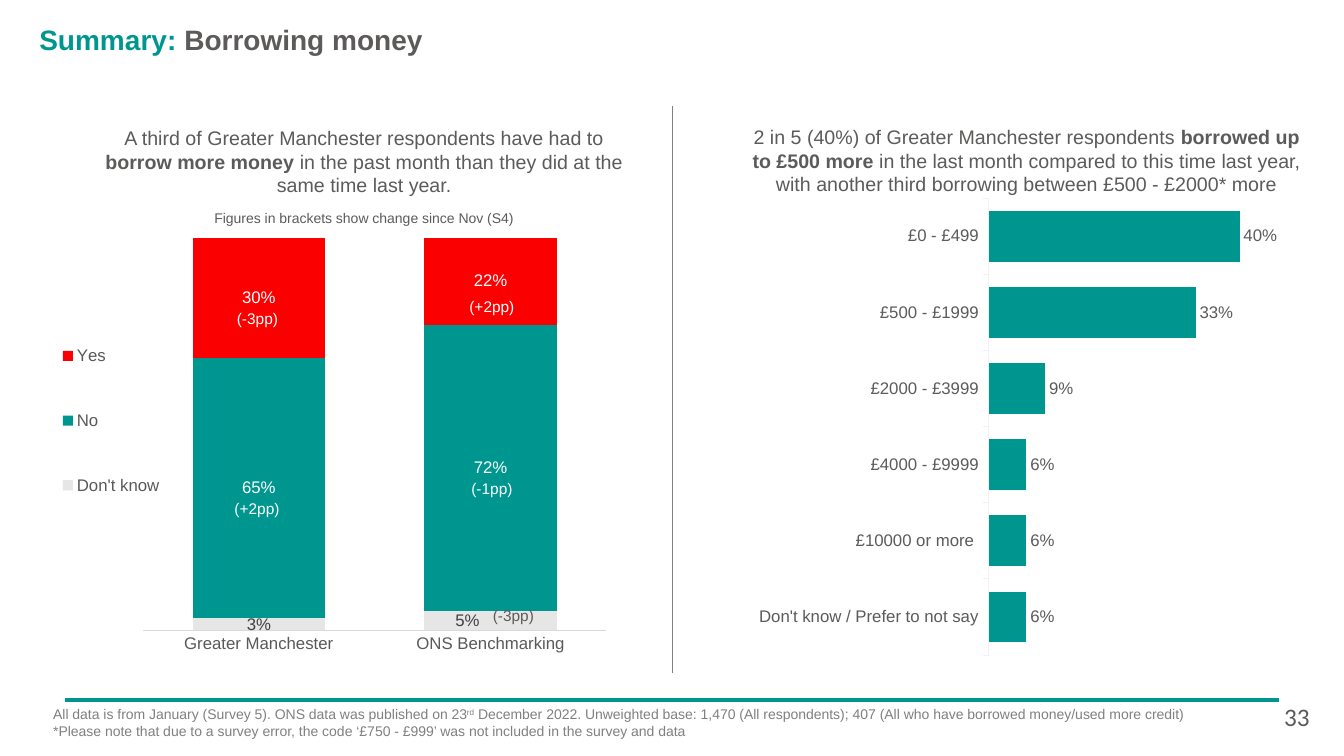
from dataclasses import dataclass

from pptx import Presentation
from pptx import util as u
from pptx.chart.data import CategoryChartData
from pptx.dml.color import RGBColor
from pptx.enum import chart as ch
from pptx.enum import shapes, text
from pptx.oxml import parse_xml
from pptx.oxml.ns import nsdecls, qn


@dataclass(frozen=True)
class Theme:
    # Colours
    teal: str = "009690"
    red: str = "FA0000"
    pale: str = "E7E6E6"
    white: str = "FFFFFF"
    ink: str = "5C5B5A"
    dark: str = "404040"
    axis_text: str = "595959"
    axis_line: str = "D9D9D9"
    faint_line: str = "F2F2F2"
    grey: str = "808080"
    # Fonts and type sizes
    face: str = "Arial"
    number_face: str = "Calibri"
    title: int = 20
    page: int = 18
    headline: int = 14
    label: int = 12
    change: int = 11
    small: int = 10


THEME = Theme()


def rgb(colour):
    return RGBColor.from_string(colour)


def style(font, size, colour=None, face=THEME.face):
    font.size = u.Pt(size)
    font.name = face
    if colour:
        font.color.rgb = rgb(colour)


def box(place):
    return [u.Cm(length) for length in place]


# Text
def add_text(slide, place, paragraphs, size, colour, face=THEME.face,
             centred=False, inset=True):
    """Each paragraph is a list of (wording, emphasis) pairs."""
    frame = slide.shapes.add_textbox(*box(place)).text_frame
    frame.word_wrap = True
    if not inset:
        frame.margin_left = frame.margin_right = 0
        frame.margin_top = frame.margin_bottom = 0
    for index, runs in enumerate(paragraphs):
        paragraph = frame.add_paragraph() if index else frame.paragraphs[0]
        paragraph.alignment = text.PP_ALIGN.CENTER if centred else text.PP_ALIGN.LEFT
        style(paragraph.font, size, colour, face)
        for wording, emphasis in runs:
            run = paragraph.add_run()
            run.text = wording
            if emphasis == "bold":
                run.font.bold = True
            elif emphasis == "super":
                run._r.get_or_add_rPr().set("baseline", "30000")


def add_title(slide, place, topic, subject):
    title = slide.shapes.title
    title.left, title.top, title.width, title.height = box(place)
    frame = title.text_frame
    frame.margin_left = frame.margin_right = frame.margin_top = frame.margin_bottom = 0
    frame.vertical_anchor = text.MSO_ANCHOR.MIDDLE
    frame.auto_size = text.MSO_AUTO_SIZE.NONE
    heading = frame.paragraphs[0]
    heading.alignment = text.PP_ALIGN.LEFT
    style(heading.font, THEME.title)
    heading.font.bold = True
    for wording, colour in ((topic, THEME.teal), (subject, THEME.ink)):
        run = heading.add_run()
        run.text = wording
        run.font.color.rgb = rgb(colour)


# Lines
def add_rule(slide, start, end, colour, width):
    rule = slide.shapes.add_connector(
        shapes.MSO_CONNECTOR.STRAIGHT, *box(start), *box(end))
    rule.line.color.rgb = rgb(colour)
    rule.line.width = u.Pt(width)
    rule._element.spPr.append(parse_xml(f"<a:effectLst {nsdecls('a')}/>"))


# Charts
def set_layout(parent, position, inner=False, edge=True, **fractions):
    """Place a chart part by fractions of the chart: x, y, w, h."""
    for old in parent.findall(qn("c:layout")):
        parent.remove(old)
    target = '<c:layoutTarget val="inner"/>' if inner else ""
    modes = '<c:xMode val="edge"/><c:yMode val="edge"/>' if edge else ""
    values = "".join(f'<c:{name} val="{value}"/>' for name, value in fractions.items())
    parent.insert(position, parse_xml(
        f"<c:layout {nsdecls('c')}><c:manualLayout>{target}{modes}{values}"
        "</c:manualLayout></c:layout>"))


def add_bars(slide, place, kind, categories, series, plot_area, gap,
             label_position, axis_colour, axis_line, axis_max):
    """Each series is (name, values, fill colour, label colour)."""
    data = CategoryChartData(number_format="0%")
    data.categories = categories
    for name, values, _, _ in series:
        data.add_series(name, values)
    chart = slide.shapes.add_chart(kind, *box(place), data).chart
    chart.has_title = False
    chart.has_legend = False
    style(chart.font, THEME.label, axis_colour)

    category_axis = chart.category_axis
    category_axis.has_major_gridlines = False
    category_axis.major_tick_mark = ch.XL_TICK_MARK.NONE
    category_axis.format.line.color.rgb = rgb(axis_line)
    category_axis.format.line.width = u.Pt(0.75)
    style(category_axis.tick_labels.font, THEME.label, axis_colour)
    value_axis = chart.value_axis
    value_axis.has_major_gridlines = False
    value_axis.minimum_scale = 0
    value_axis.maximum_scale = axis_max
    value_axis.visible = False

    plot = chart.plots[0]
    plot.vary_by_categories = False
    plot.gap_width = gap
    for bars, (_, _, fill, label_colour) in zip(plot.series, series):
        bars.format.fill.solid()
        bars.format.fill.fore_color.rgb = rgb(fill)
        bars.format.line.fill.background()
        labels = bars.data_labels
        labels.show_value = True
        labels.number_format = "0%"
        labels.number_format_is_linked = False
        labels.position = label_position
        style(labels.font, THEME.label, label_colour)
        for leader in bars._element.iter(qn("c:showLeaderLines")):
            leader.set("val", "0")
    x, y, w, h = plot_area
    set_layout(chart._chartSpace.chart.plotArea, 0, inner=True, x=x, y=y, w=w, h=h)
    return chart


def add_borrowing_chart(slide):
    chart = add_bars(
        slide, (1.27, 5.65, 14.6, 11.25), ch.XL_CHART_TYPE.COLUMN_STACKED_100,
        ["Greater Manchester", "ONS Benchmarking"],
        [("Don't know", (0.03, 0.05), THEME.pale, THEME.dark),
         ("No", (0.65, 0.72), THEME.teal, THEME.white),
         ("Yes", (0.30, 0.22), THEME.red, THEME.white)],
        (0.16, 0.03, 0.8, 0.88), 75, ch.XL_LABEL_POSITION.CENTER,
        THEME.axis_text, THEME.axis_line, 1)
    chart.plots[0].overlap = 100

    chart.has_legend = True
    chart.legend.position = ch.XL_LEGEND_POSITION.LEFT
    chart.legend.include_in_layout = False
    style(chart.legend.font, THEME.label, THEME.axis_text)
    set_layout(chart.legend._element, 1, x=0.01, y=0.17, w=0.19, h=0.54)

    # Move the benchmark's "Don't know" label aside for its change figure
    unsure = chart.plots[0].series[0]
    benchmark_label = unsure.points[1].data_label
    style(benchmark_label.font, THEME.label, THEME.dark)
    benchmark_label.position = ch.XL_LABEL_POSITION.CENTER
    set_layout(unsure._element.find(".//" + qn("c:dLbl")), 1, edge=False, x=-0.04, y=0)


def add_amount_chart(slide):
    chart = add_bars(
        slide, (19.13, 4.98, 13.46, 12.01), ch.XL_CHART_TYPE.BAR_CLUSTERED,
        ["£0 - £499", "£500 - £1999", "£2000 - £3999", "£4000 - £9999",
         "£10000 or more ", "Don't know / Prefer to not say"],
        [("Share of borrowers", (0.40, 0.33, 0.09, 0.06, 0.06, 0.06),
          THEME.teal, THEME.ink)],
        (0.43, 0, 0.54, 0.96), 50, ch.XL_LABEL_POSITION.OUTSIDE_END,
        THEME.ink, THEME.faint_line, 0.46)
    chart.category_axis.reverse_order = True
    chart.category_axis.major_tick_mark = ch.XL_TICK_MARK.OUTSIDE


def main():
    deck = Presentation()
    deck.slide_width, deck.slide_height = u.Cm(33.87), u.Cm(19.05)
    slide = deck.slides.add_slide(deck.slide_layouts[5])

    # Frame of the slide
    add_rule(slide, (1.63, 17.63), (32.23, 17.63), THEME.teal, 3)
    add_rule(slide, (16.94, 2.67), (16.94, 16.97), THEME.grey, 0.5)
    add_title(slide, (0.99, 0.56, 29.21, 0.86), "Summary: ", "Borrowing money")

    # Left: who borrowed more
    add_text(slide, (2.54, 3.18, 13.28, 1.8), [[
        ("A third of Greater Manchester respondents have had to ", None),
        ("borrow more money ", "bold"),
        ("in the past month than they did at the same time last year.", None),
    ]], THEME.headline, THEME.ink, centred=True, inset=False)
    add_text(slide, (5.13, 5.28, 8.08, 0.43),
             [[("Figures in brackets show change since Nov (S4)", None)]],
             THEME.small, THEME.ink, centred=True, inset=False)
    add_borrowing_chart(slide)
    for change, left, top, colour in (
            ("(-3pp)", 5.72, 7.67, THEME.white),
            ("(+2pp)", 5.66, 12.45, THEME.white),
            ("(+2pp)", 11.58, 7.37, THEME.white),
            ("(-1pp)", 11.63, 11.96, THEME.white),
            ("(-3pp)", 12.17, 15.14, THEME.ink)):
        add_text(slide, (left, top, 1.8, 0.74), [[(change, None)]],
                 THEME.change, colour)

    # Right: how much more
    add_text(slide, (18.75, 3.15, 14.25, 2.39), [[
        ("2 in 5 (40%) of Greater Manchester respondents ", None),
        ("borrowed up to £500 more", "bold"),
        (" in the last month compared to this time last year, "
         "with another third borrowing between £500 - £2000* more", None),
    ]], THEME.headline, THEME.ink, centred=True, inset=False)
    add_amount_chart(slide)

    # Footnotes and page number
    add_text(slide, (1.09, 17.65, 30.43, 1.42), [
        [("All data is from January (Survey 5). ONS data was published on 23", None),
         ("rd", "super"),
         (" December 2022. Unweighted base: 1,470 (All respondents); "
          "407 (All who have borrowed money/used more credit)", None)],
        [("*Please note that due to a survey error, the code ‘£750 - £999’ "
          "was not included in the survey and data", None)],
    ], THEME.small, THEME.grey)
    add_text(slide, (32.11, 17.55, 1.35, 1.02), [[("33", None)]],
             THEME.page, THEME.ink, THEME.number_face)

    deck.save("out.pptx")


if __name__ == "__main__":
    main()
